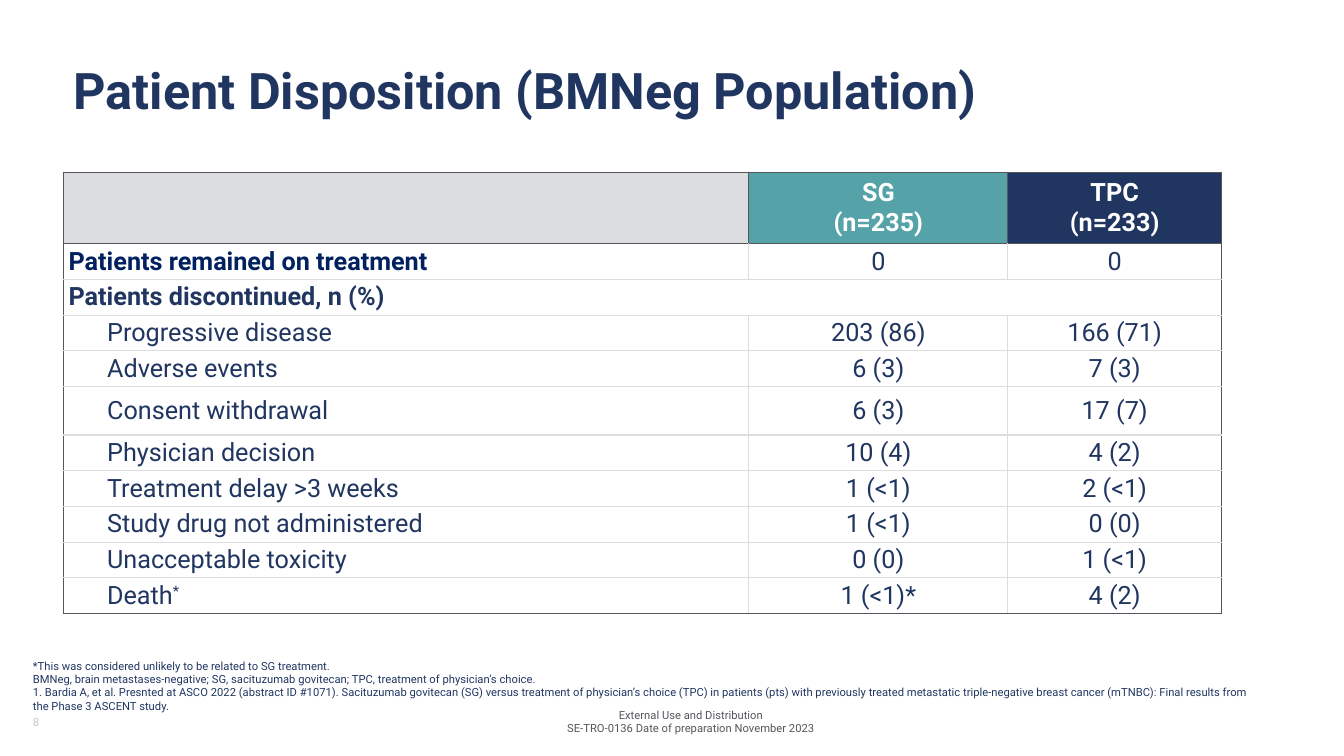
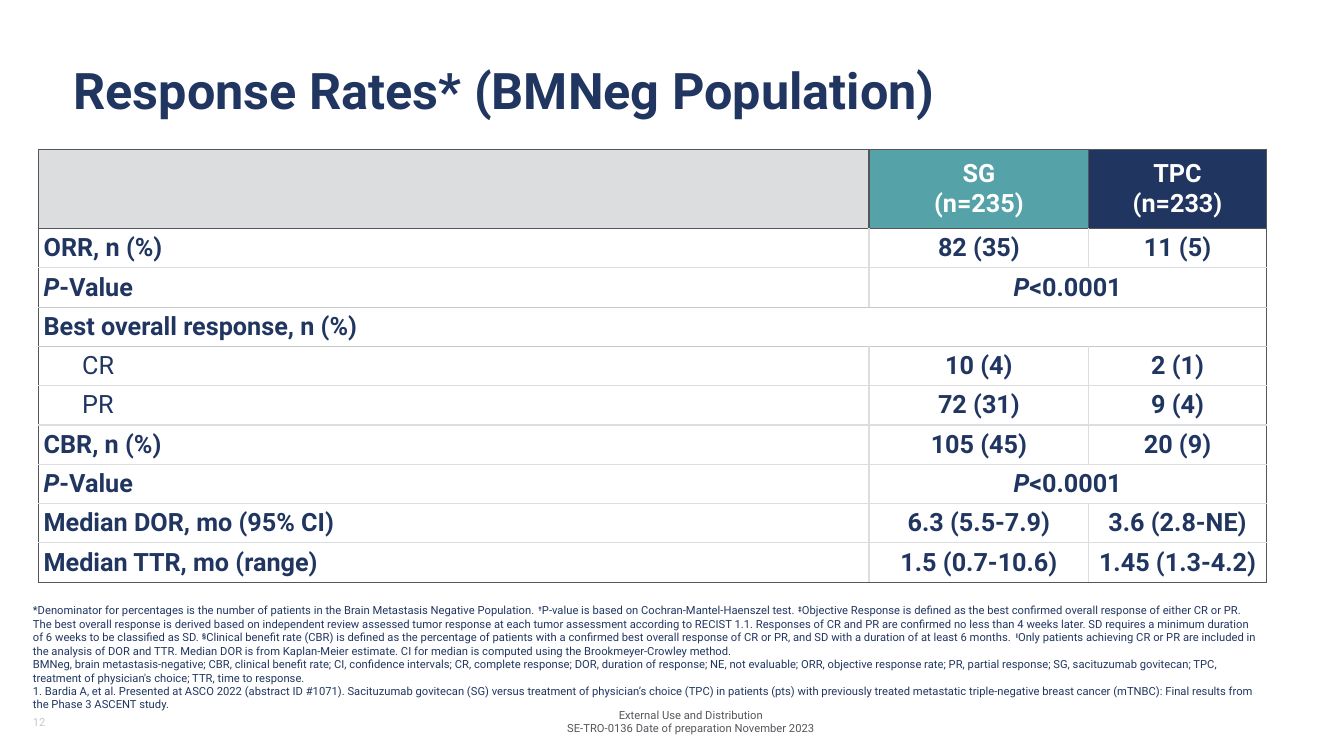
from lxml import etree
from pptx import Presentation
from pptx import util as u
from pptx.dml.color import RGBColor
from pptx.enum import text
from pptx.oxml import ns

FONT = "Roboto"
NAVY = RGBColor(0x20, 0x36, 0x61)
DEEP_NAVY = RGBColor(0x00, 0x20, 0x60)
TEAL = RGBColor(0x55, 0xA2, 0xA8)
WHITE = RGBColor(0xFF, 0xFF, 0xFF)
DARK_GREY = RGBColor(0x54, 0x56, 0x5B)
MID_GREY = RGBColor(0xC6, 0xCA, 0xC6)
LIGHT_GREY = RGBColor(0xDC, 0xDD, 0xDF)

LEFT, CENTER = text.PP_ALIGN.LEFT, text.PP_ALIGN.CENTER
MIDDLE, TOP = text.MSO_ANCHOR.MIDDLE, text.MSO_ANCHOR.TOP

FOOTER = "External Use and Distribution\nSE-TRO-0136 Date of preparation November 2023"
HEADERS = ["", "SG\n(n=235)", "TPC\n(n=233)"]
HEADER_FILLS = [LIGHT_GREY, TEAL, NAVY]

# Rows: indent level, label, then values; a missing value extends the last cell.
# In texts, | separates runs, a leading ^ raises a run, a leading / slants it.
DISPOSITION_ROWS = [
    (0, "Patients remained on treatment", "0", "0"),
    (0, "Patients discontinued, n (%)"),
    (1, "Progressive disease", "203 (86)", "166 (71)"),
    (1, "Adverse events", "6 (3)", "7 (3)"),
    (1, "Consent withdrawal", "6 (3)", "17 (7)"),
    (1, "Physician decision", "10 (4)", "4 (2)"),
    (1, "Treatment delay >3 weeks", "1 (<1)", "2 (<1)"),
    (1, "Study drug not administered", "1 (<1)", "0 (0)"),
    (1, "Unacceptable toxicity", "0 (0)", "1 (<1)"),
    (1, "Death|^*", "1 (<1)*", "4 (2)"),
]
P_VALUE_ROW = (0, "/P|-Value", "/P|<0.0001")
RESPONSE_ROWS = [
    (0, "ORR, n (%)", "82 (35)", "11 (5)"),
    P_VALUE_ROW,
    (0, "Best overall response, n (%)"),
    (1, "CR", "10 (4)", "2 (1)"),
    (1, "PR", "72 (31)", "9 (4)"),
    (0, "CBR, n (%)", "105 (45)", "20 (9)"),
    P_VALUE_ROW,
    (0, "Median DOR, mo (95% CI)", "6.3 (5.5-7.9)", "3.6 (2.8-NE)"),
    (0, "Median TTR, mo (range)", "1.5 (0.7-10.6)", "1.45 (1.3-4.2)"),
]

CITATION = (
    "1. Bardia A, et al. {} at ASCO 2022 (abstract ID #1071). Sacituzumab govitecan (SG) "
    "versus treatment of physician’s choice (TPC) in patients (pts) with previously treated "
    "metastatic triple-negative breast cancer (mTNBC): Final results from the Phase 3 ASCENT study."
)
DISPOSITION_NOTES = "\n".join([
    "*This was considered unlikely to be related to SG treatment.",
    "BMNeg, brain metastases-negative; SG, sacituzumab govitecan; TPC, treatment of "
    "physician’s choice.",
    CITATION.format("Presnted"),
])
RESPONSE_DEFINITIONS = "|".join([
    "*Denominator for percentages is the number of patients in the Brain Metastasis Negative "
    "Population. ",
    "^†", "P-value is based on Cochran-Mantel-Haenszel test. ",
    "^‡", "Objective Response is defined as the best confirmed overall response of either CR or "
    "PR. The best overall response is derived based on independent review assessed tumor response "
    "at each tumor assessment according to RECIST 1.1. Responses of CR and PR are confirmed no "
    "less than 4 weeks later. SD requires a minimum duration of 6 weeks to be classified as SD. ",
    "^§", "Clinical benefit rate (CBR) is defined as the percentage of patients with a confirmed "
    "best overall response of CR or PR, and SD with a duration of at least 6 months. ",
    "^ǁ", "Only patients achieving CR or PR are included in the analysis of DOR and TTR. Median "
    "DOR is from Kaplan-Meier estimate. CI for median is computed using the Brookmeyer-Crowley "
    "method.",
])
RESPONSE_NOTES = "\n".join([
    RESPONSE_DEFINITIONS,
    "BMNeg, brain metastasis-negative; CBR, clinical benefit rate; CI, confidence intervals; CR, "
    "complete response; DOR, duration of response; NE, not evaluable; ORR, objective response "
    "rate; PR, partial response; SG, sacituzumab govitecan; TPC, treatment of physician's choice; "
    "TTR, time to response.",
    CITATION.format("Presented"),
])


def write(frame, content, size, color, bold=False, align=LEFT, bold_marks=False):
    """Fill a text frame, one paragraph per line of content."""
    for index, line in enumerate(content.split("\n")):
        paragraph = frame.paragraphs[0] if index == 0 else frame.add_paragraph()
        paragraph.alignment = align
        paragraph.font.size = u.Pt(size)
        for part in line.split("|"):
            raised, slanted = part.startswith("^"), part.startswith("/")
            run = paragraph.add_run()
            run.text = part[1:] if raised or slanted else part
            run.font.name, run.font.size = FONT, u.Pt(size)
            run.font.color.rgb = color
            run.font.bold = bold or (raised and bold_marks)
            run.font.italic = slanted
            if raised:
                run._r.get_or_add_rPr().set("baseline", "30000")


def add_text(slide, box, content, color, align=LEFT, anchor=MIDDLE):
    """Add a small-print text box; box is left, top, width, height in cm."""
    frame = slide.shapes.add_textbox(*map(u.Cm, box)).text_frame
    frame.word_wrap = True
    frame.vertical_anchor = anchor
    write(frame, content, 8, color, align=align, bold_marks=True)


def set_borders(cell, colors):
    """Draw the left, right, top and bottom edges of a cell."""
    properties = cell._tc.get_or_add_tcPr()
    for side, color in zip("LRTB", colors):
        line = etree.SubElement(properties, ns.qn(f"a:ln{side}"), w=str(u.Pt(1)))
        fill = etree.SubElement(line, ns.qn("a:solidFill"))
        etree.SubElement(fill, ns.qn("a:srgbClr"), val=str(color))


def format_cell(cell, fill, borders):
    set_borders(cell, borders)
    cell.fill.solid()
    cell.fill.fore_color.rgb = fill
    cell.vertical_anchor = MIDDLE
    cell.margin_left = cell.margin_right = u.Cm(0.13)
    cell.margin_top = cell.margin_bottom = 0


def add_results_table(slide, left, top, widths, heights, rows, bold_values=False,
                      section_line=LIGHT_GREY, first_label=NAVY):
    """Add a table with a coloured header and a dark outer frame."""
    count = len(rows) + 1
    frame = slide.shapes.add_table(count, len(widths), u.Cm(left), u.Cm(top),
                                   u.Cm(sum(widths)), u.Cm(sum(heights)))
    table = frame.table
    table.first_row = table.horz_banding = False
    for column, width in zip(table.columns, widths):
        column.width = u.Cm(width)
    for row, height in zip(table.rows, heights):
        row.height = u.Cm(height)

    # Horizontal rules: dark frame, then section rows, then plain rows
    rules = [LIGHT_GREY] * (count + 1)
    for number, row in enumerate(rows, 1):
        if len(row) == 2:
            rules[number] = rules[number + 1] = section_line
    rules[0] = rules[1] = rules[-1] = DARK_GREY

    # Header
    for column, (header, fill) in enumerate(zip(HEADERS, HEADER_FILLS)):
        cell = table.cell(0, column)
        format_cell(cell, fill, [DARK_GREY] * 4)
        if header:
            write(cell.text_frame, header, 18, WHITE, True, CENTER)

    # Body
    last = len(widths) - 1
    for number, (level, *contents) in enumerate(rows, 1):
        for column, content in enumerate(contents):
            cell = table.cell(number, column)
            end = last if column == len(contents) - 1 else column
            if end > column:
                cell.merge(table.cell(number, end))
            format_cell(cell, WHITE, [
                LIGHT_GREY if column else DARK_GREY,
                DARK_GREY if end == last else LIGHT_GREY,
                rules[number], rules[number + 1]])
            if column:
                write(cell.text_frame, content, 18, NAVY, bold_values, CENTER)
            else:
                color = first_label if number == 1 else NAVY
                write(cell.text_frame, content, 18, color, level == 0)
                if level:
                    paragraph = cell.text_frame.paragraphs[0]
                    paragraph._p.get_or_add_pPr().set("marL", str(u.Cm(0.97)))


def add_slide(presentation, title, number):
    """Add a slide with the shared title, page number and footer."""
    slide = presentation.slides.add_slide(presentation.slide_layouts[5])
    shape = slide.shapes.title
    shape.left, shape.top, shape.width, shape.height = map(u.Cm, (1.6, 1.02, 30.48, 2.74))
    frame = shape.text_frame
    frame.auto_size = text.MSO_AUTO_SIZE.NONE
    frame.vertical_anchor = MIDDLE
    write(frame, title, 36, NAVY, True)
    frame.paragraphs[0].line_spacing = 0.8
    add_text(slide, (13.06, 17.78, 8.71, 0.81), FOOTER, DARK_GREY, CENTER)
    add_text(slide, (0.58, 17.78, 7.62, 0.81), number, MID_GREY)
    return slide


def add_disposition_slide(presentation):
    slide = add_slide(presentation, "Patient Disposition (BMNeg Population)", "8")
    heights = [1.8] + [0.9] * 4 + [1.22] + [0.9] * 5
    add_results_table(slide, 1.6, 4.34, [17.27, 6.53, 5.38], heights, DISPOSITION_ROWS,
                      first_label=DEEP_NAVY)
    add_text(slide, (0.58, 16.48, 31.5, 1.6), DISPOSITION_NOTES, NAVY, anchor=TOP)


def add_response_slide(presentation):
    slide = add_slide(presentation, "Response Rates* (BMNeg Population)", "12")
    heights = [2.0] + [0.99] * 9
    add_results_table(slide, 0.97, 3.76, [20.93, 5.54, 4.47], heights, RESPONSE_ROWS,
                      bold_values=True, section_line=MID_GREY)
    add_text(slide, (0.58, 15.09, 31.5, 3.0), RESPONSE_NOTES, NAVY, anchor=TOP)


def main():
    presentation = Presentation()
    presentation.slide_width, presentation.slide_height = u.Cm(33.87), u.Cm(19.05)
    add_disposition_slide(presentation)
    add_response_slide(presentation)
    presentation.save("out.pptx")


if __name__ == "__main__":
    main()
